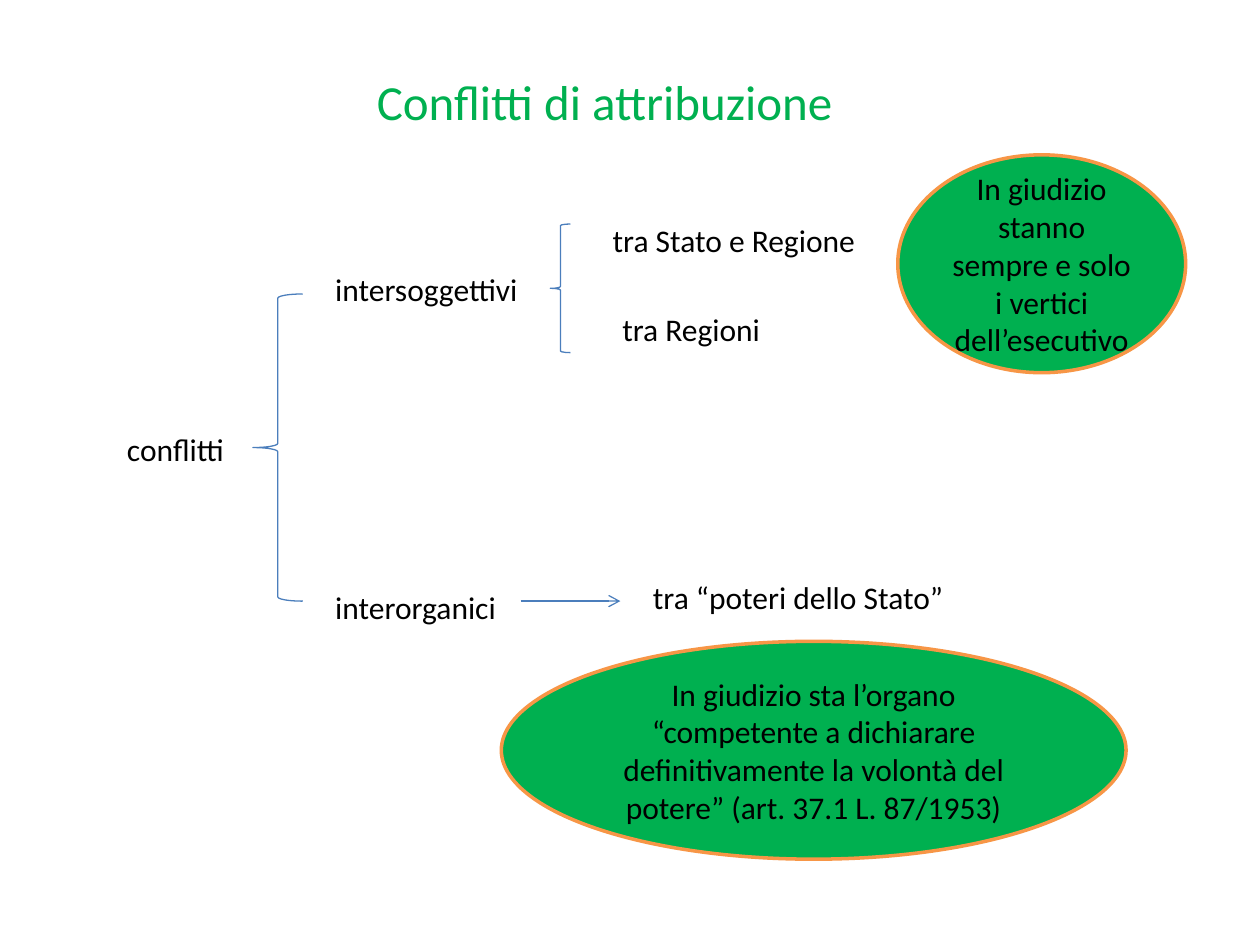
from pptx import Presentation
from pptx.dml.color import RGBColor
from pptx.enum.shapes import MSO_CONNECTOR, MSO_SHAPE
from pptx.enum.text import MSO_ANCHOR, PP_ALIGN
from pptx.oxml.ns import qn
from pptx.util import Pt
from lxml.etree import SubElement

THEME = {
    "font": "Calibri", "title_size": 28, "body_size": 18,
    "green": "00B050", "orange": "F79646", "blue": "4B7EBC", "black": "000000",
    "thin": 0.75, "thick": 2,
}

# Content: boxes are (left, top, width, height) in points
TITLE = ("Conflitti di attribuzione", (167, 37.5, 357, 41))
LABEL_H = 29
LABELS = [  # text, left, top, width
    ("conflitti", 65.5, 242, 96.5),
    ("intersoggettivi", 184.5, 151, 130),
    ("tra Stato e Regione", 343, 122.5, 187),
    ("tra Regioni", 348.5, 173.5, 187),
    ("interorganici", 184.5, 332.5, 130),
    ("tra “poteri dello Stato”", 366, 327, 199),
]
BRACES = [(144.5, 168, 28.5, 175.5), (314.5, 128, 11.5, 73.5)]
ARROW = (297.5, 343.5, 354.5, 343.5)
NOTES = [
    ("In giudizio stanno sempre e solo i vertici dell’esecutivo",
     (513, 88.5, 164.5, 124.5)),
    ("In giudizio sta l’organo “competente a dichiarare definitivamente "
     "la volontà del potere” (art. 37.1 L. 87/1953)",
     (286.5, 366.5, 357, 124.5)),
]


def color(name):
    return RGBColor.from_string(THEME[name])


def pts(values):
    return [Pt(v) for v in values]


def write(sp, text, size="body_size", ink="black", align=PP_ALIGN.LEFT,
          anchor=MSO_ANCHOR.TOP):
    tf = sp.text_frame
    tf.word_wrap = True
    tf.vertical_anchor = anchor
    p = tf.paragraphs[0]
    p.alignment = align
    r = p.add_run()
    r.text = text
    r.font.name = THEME["font"]
    r.font.size = Pt(THEME[size])
    r.font.color.rgb = color(ink)


def outline(sp, ink, width):
    sp.line.color.rgb = color(ink)
    sp.line.width = Pt(THEME[width])


def add_shape(slide, kind, box, fill, ink, width):
    sp = slide.shapes.add_shape(kind, *pts(box))
    sp.shadow.inherit = False
    if fill:
        sp.fill.solid()
        sp.fill.fore_color.rgb = color(fill)
    else:
        sp.fill.background()
    outline(sp, ink, width)
    return sp


def main():
    prs = Presentation()
    prs.slide_width, prs.slide_height = Pt(720), Pt(540)
    slide = prs.slides.add_slide(prs.slide_layouts[5])

    # Title
    text, box = TITLE
    title = slide.shapes.title
    title.left, title.top, title.width, title.height = pts(box)
    write(title, text, "title_size", "green", PP_ALIGN.CENTER)

    # Labels of the tree
    for text, left, top, width in LABELS:
        sp = slide.shapes.add_textbox(*pts((left, top, width, LABEL_H)))
        write(sp, text)

    # Braces and arrow joining the labels
    for box in BRACES:
        add_shape(slide, MSO_SHAPE.LEFT_BRACE, box, None, "blue", "thin")
    arrow = slide.shapes.add_connector(MSO_CONNECTOR.STRAIGHT, *pts(ARROW))
    outline(arrow, "blue", "thin")
    SubElement(arrow.line._get_or_add_ln(), qn("a:tailEnd"), type="arrow")
    SubElement(arrow._element.spPr, qn("a:effectLst"))

    # Notes in ellipses
    for text, box in NOTES:
        sp = add_shape(slide, MSO_SHAPE.OVAL, box, "green", "orange", "thick")
        write(sp, text, align=PP_ALIGN.CENTER, anchor=MSO_ANCHOR.MIDDLE)

    prs.save("out.pptx")


if __name__ == "__main__":
    main()
